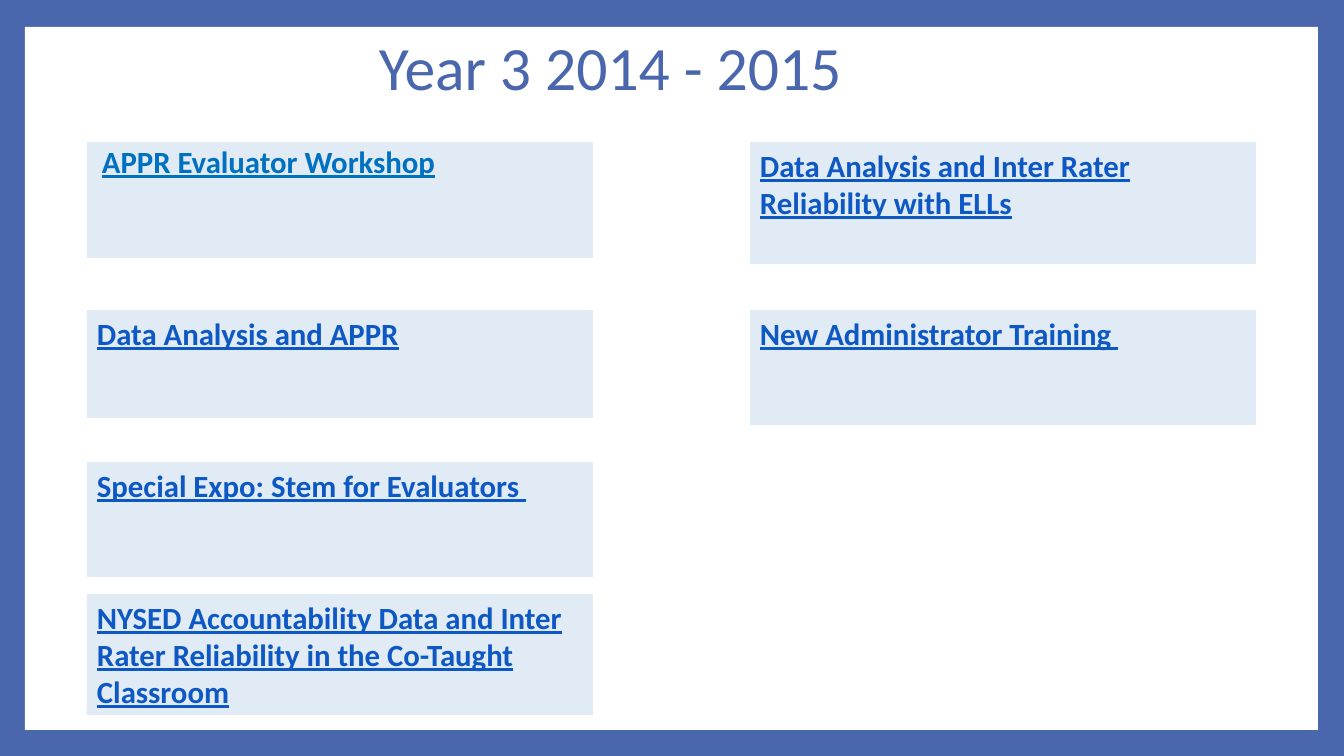
import pptx
import pptx.dml.color
import pptx.enum.shapes
import pptx.enum.text
import pptx.util

# Content: lengths in px
PAGE_SIZE = (1344, 756)
PANEL = (25, 27, 1293, 703)
TITLE_BOX = (14, 0, 1207, 142)
TITLE = "Year 3 2014 - 2015 "
FRAME_BLUE, LINK_BLUE, FIRST_BLUE = "4A66AC", "0E58C4", "0070C0"
WHITE, CARD_FILL = "FFFFFF", "E0EBF6"
CARD_WIDTH = 506
FIRST_FORMAT = dict(color=FIRST_BLUE, inset=15, spacing=0.9)

# Each column: left edge, then (top, height, text, format) for each card
COLUMNS = [
    (87, [
        (142, 116, "APPR Evaluator Workshop", FIRST_FORMAT),
        (310, 108, "Data Analysis and APPR", {}),
        (462, 115, "Special Expo: Stem for Evaluators ", {}),
        (594, 121, "NYSED Accountability Data and Inter Rater Reliability "
                   "in the Co-Taught Classroom", {}),
    ]),
    (750, [
        (142, 122, "Data Analysis and Inter Rater Reliability with ELLs", {}),
        (310, 115, "New Administrator Training ", {}),
    ]),
]


def px(length):
    return pptx.util.Emu(round(length * 914400 / 100.8))


def rgb(value):
    return pptx.dml.color.RGBColor.from_string(value)


def add_panel(page, bounds, fill):
    box = page.shapes.add_shape(
        pptx.enum.shapes.MSO_SHAPE.RECTANGLE, *map(px, bounds))
    box.shadow.inherit = False
    box.fill.solid()
    box.fill.fore_color.rgb = rgb(fill)
    box.line.fill.background()
    return box


def write(box, text, color=LINK_BLUE, size=22, bold=True, underline=True,
          align="LEFT", anchor="TOP", inset=10, spacing=1.0):
    frame = box.text_frame
    frame.word_wrap = True
    frame.vertical_anchor = pptx.enum.text.MSO_ANCHOR[anchor]
    frame.margin_left, frame.margin_right = px(inset), px(10)
    frame.margin_top = frame.margin_bottom = px(5)
    para = frame.paragraphs[0]
    para.alignment = pptx.enum.text.PP_ALIGN[align]
    para.line_spacing = spacing
    span = para.add_run()
    span.text = text
    span.font.name = "Calibri"
    span.font.size = pptx.util.Pt(size)
    span.font.bold = bold
    span.font.underline = underline
    span.font.color.rgb = rgb(color)


def main():
    deck = pptx.Presentation()
    deck.slide_width, deck.slide_height = map(px, PAGE_SIZE)
    page = deck.slides.add_slide(deck.slide_layouts[6])

    # Blue frame around a white panel
    page.background.fill.solid()
    page.background.fill.fore_color.rgb = rgb(FRAME_BLUE)
    add_panel(page, PANEL, WHITE)

    # Title
    title = page.shapes.add_textbox(*map(px, TITLE_BOX))
    write(title, TITLE, color=FRAME_BLUE, size=44, bold=False,
          underline=False, align="CENTER", anchor="MIDDLE", spacing=0.9)

    # Workshop cards
    for left, cards in COLUMNS:
        for top, height, text, text_format in cards:
            card = add_panel(page, (left, top, CARD_WIDTH, height), CARD_FILL)
            write(card, text, **text_format)

    deck.save("out.pptx")


if __name__ == "__main__":
    main()
